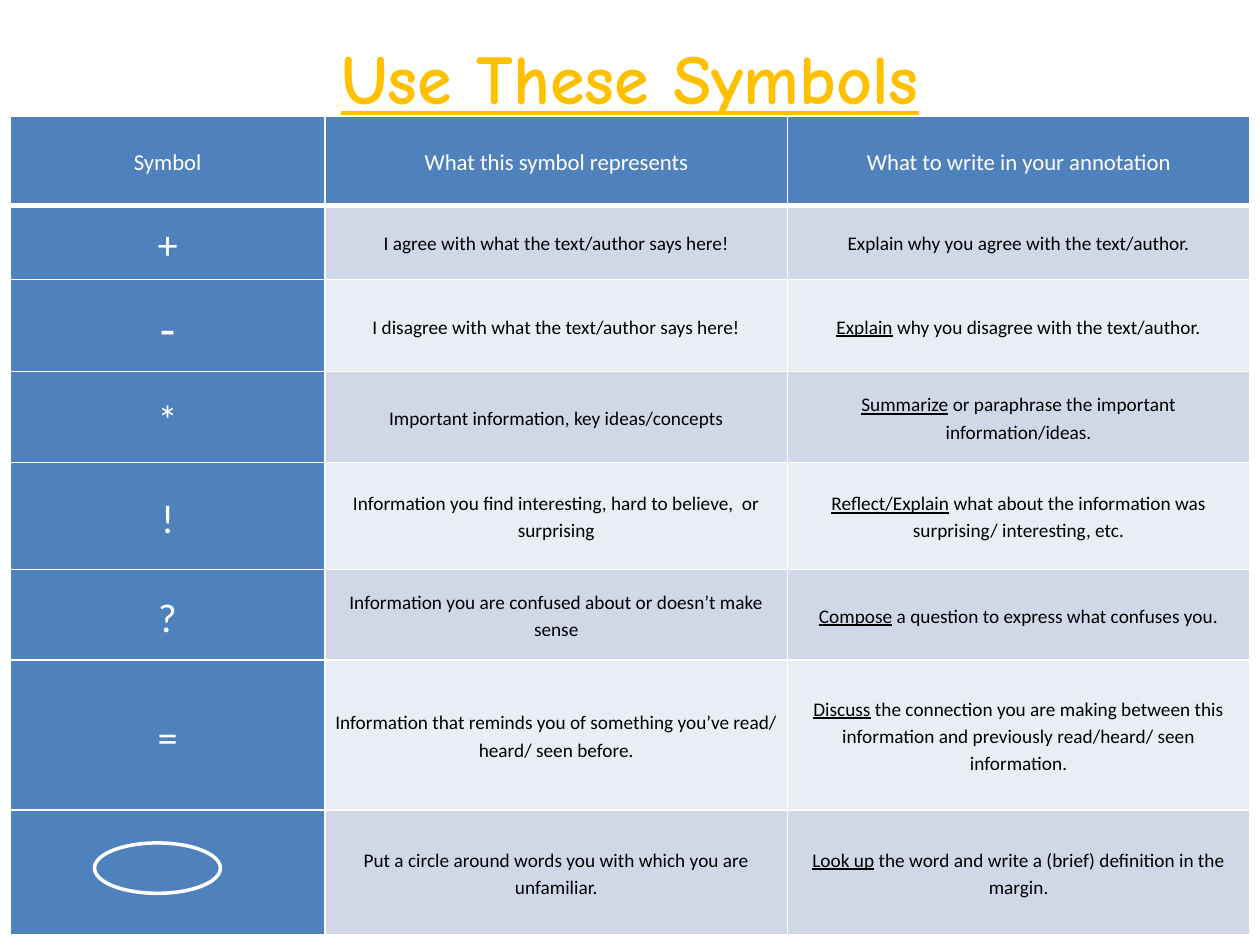
from lxml import etree
from pptx import Presentation
from pptx.dml.color import RGBColor
from pptx.enum.shapes import MSO_SHAPE
from pptx.enum.text import MSO_ANCHOR, PP_ALIGN
from pptx.oxml.ns import qn
from pptx.util import Inches, Pt

OVAL = MSO_SHAPE.OVAL
MIDDLE = MSO_ANCHOR.MIDDLE
CENTER = PP_ALIGN.CENTER

WHITE, BLACK, BLUE, GOLD = "FFFFFF", "000000", "4F81BD", "FFC000"
BANDS = ["D0D8E8", "E9EDF4"]
COLUMNS = [2.5, 3.67, 3.67]
ROWS = [0.71, 0.59, 0.73, 0.72, 0.85, 0.72, 1.19, 0.99]
HEADER_SIZE, BODY_SIZE, SYMBOL_SIZE, MINUS_SIZE = 13, 11, 23, 29

HEADERS = ["Symbol", "What this symbol represents", "What to write in your annotation"]
SYMBOLS = [
    ("+", "I agree with what the text/author says here!",
     "", "Explain why you agree with the text/author."),
    ("-", "I disagree with what the text/author says here!",
     "Explain", " why you disagree with the text/author."),
    ("*", "Important information, key ideas/concepts",
     "Summarize", " or paraphrase the important information/ideas."),
    ("!", "Information you find interesting, hard to believe,  or surprising",
     "Reflect/Explain", " what about the information was surprising/ interesting, etc."),
    ("?", "Information you are confused about or doesn’t make sense",
     "Compose", " a question to express what confuses you."),
    ("=", "Information that reminds you of something you’ve read/ heard/ seen before.",
     "Discuss", " the connection you are making between this information and "
     "previously read/heard/ seen information."),
    ("", "Put a circle around words you with which you are unfamiliar.",
     "Look up", " the word and write a (brief) definition in the margin."),
]


def rgb(value):
    """Turn a hex string into a colour."""
    return RGBColor.from_string(value)


def style(p, size, color, font="Calibri"):
    """Centre a paragraph and set its font."""
    p.alignment = CENTER
    p.font.name = font
    p.font.size = Pt(size)
    p.font.color.rgb = rgb(color)


def add_title(s, text):
    """Add the underlined heading."""
    tf = s.shapes.add_textbox(Inches(2), Inches(0.17), Inches(6), Inches(0.87)).text_frame
    tf.word_wrap = True
    tf.vertical_anchor = MIDDLE
    p = tf.paragraphs[0]
    p.text = text
    style(p, 40, GOLD, "Comic Neue")
    p.font.bold = p.font.underline = True


def set_borders(cell, bottom):
    """Draw white lines on the four sides of a cell."""
    tcPr = cell._tc.get_or_add_tcPr()
    for side, width in (("L", 1), ("R", 1), ("T", 1), ("B", bottom)):
        ln = etree.SubElement(tcPr, qn(f"a:ln{side}"), w=str(Pt(width)))
        fill = etree.SubElement(ln, qn("a:solidFill"))
        etree.SubElement(fill, qn("a:srgbClr"), val=WHITE)


def fill_cell(cell, text, size, color, fill, lead="", bottom=1):
    """Write a cell, with an optional underlined lead, and colour it."""
    set_borders(cell, bottom)
    cell.fill.solid()
    cell.fill.fore_color.rgb = rgb(fill)
    cell.vertical_anchor = MIDDLE
    cell.margin_left = cell.margin_right = Inches(0.06)
    cell.margin_top = cell.margin_bottom = 0
    p = cell.text_frame.paragraphs[0]
    if lead:
        r = p.add_run()
        r.text = lead
        r.font.underline = True
    if text:
        p.add_run().text = text
    p.line_spacing = 1.15
    style(p, size, color)


def add_symbol_table(s):
    """Add the table of symbols and their meanings."""
    table = s.shapes.add_table(len(ROWS), len(COLUMNS), Inches(0.08), Inches(0.92),
                               Inches(sum(COLUMNS)), Inches(sum(ROWS))).table
    for column, width in zip(table.columns, COLUMNS):
        column.width = Inches(width)
    for row, height in zip(table.rows, ROWS):
        row.height = Inches(height)
    for j, header in enumerate(HEADERS):
        fill_cell(table.cell(0, j), header, HEADER_SIZE, WHITE, BLUE, bottom=3)
    for i, (symbol, meaning, lead, note) in enumerate(SYMBOLS, 1):
        band = BANDS[(i - 1) % 2]
        size = MINUS_SIZE if symbol == "-" else SYMBOL_SIZE
        fill_cell(table.cell(i, 0), symbol, size, WHITE, BLUE)
        fill_cell(table.cell(i, 1), meaning, BODY_SIZE, BLACK, band)
        fill_cell(table.cell(i, 2), note, BODY_SIZE, BLACK, band, lead)


def add_circle_symbol(s):
    """Add the oval that stands for circling a word."""
    sp = s.shapes.add_shape(OVAL, Inches(0.75), Inches(6.69), Inches(1), Inches(0.4))
    sp.shadow.inherit = False
    sp.fill.solid()
    sp.fill.fore_color.rgb = rgb(BLUE)
    sp.line.color.rgb = rgb(WHITE)
    sp.line.width = Pt(2)


def main():
    """Build and save the slide."""
    prs = Presentation()
    prs.slide_width, prs.slide_height = Inches(10), Inches(7.5)
    s = prs.slides.add_slide(prs.slide_layouts[6])
    add_title(s, "Use These Symbols")
    add_symbol_table(s)
    add_circle_symbol(s)
    prs.save("out.pptx")


if __name__ == "__main__":
    main()
